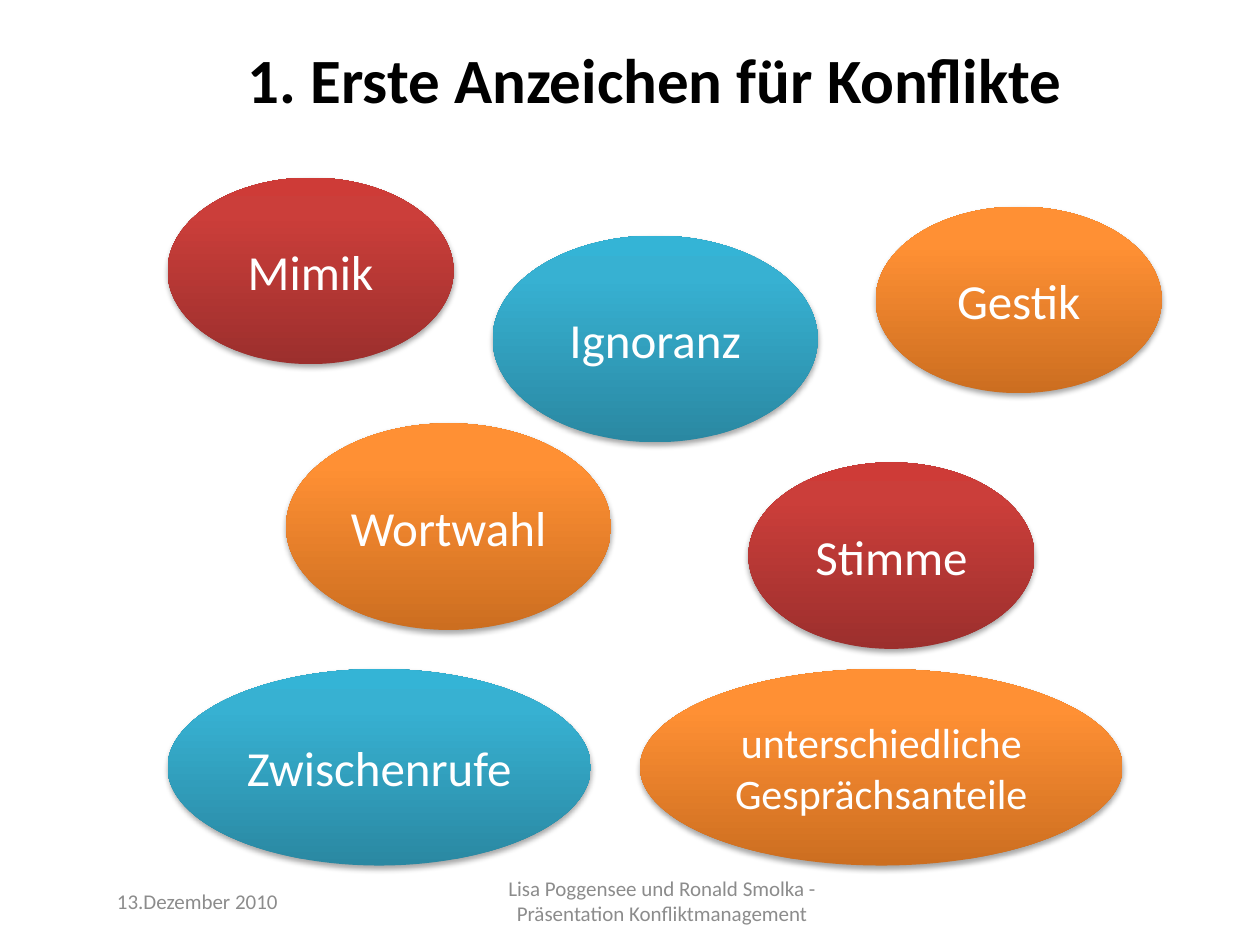
from dataclasses import dataclass

from pptx import Presentation
from pptx.dml.color import RGBColor
from pptx.enum.shapes import MSO_SHAPE as Shape
from pptx.enum.text import MSO_ANCHOR as Anchor, PP_ALIGN as Align
from pptx.oxml import parse_xml
from pptx.oxml.ns import nsdecls
from pptx.util import Inches, Pt


@dataclass(frozen=True)
class Theme:
    font: str = "Calibri"
    black: str = "000000"
    white: str = "FFFFFF"
    grey: str = "8C8C8C"
    # Gradient colours from bottom to top
    red: tuple = ("9C2F2D", "CB3E3A", "CE3B37")
    blue: tuple = ("2A88A2", "37B1D2", "34B4D6")
    orange: tuple = ("CC6E20", "FF9034", "FF9136")
    stops: tuple = (0, 80, 100)
    title_size: int = 36
    bubble_size: int = 28
    small_bubble_size: int = 24
    footer_size: int = 12


THEME = Theme()


def write_text(shape, text, size, color, bold=False, align=Align.CENTER):
    frame = shape.text_frame
    frame.word_wrap = True
    frame.vertical_anchor = Anchor.MIDDLE
    para = frame.paragraphs[0]
    para.alignment = align
    span = para.add_run()
    span.text = text
    span.font.name = THEME.font
    span.font.size = Pt(size)
    span.font.bold = bold
    span.font.color.rgb = RGBColor.from_string(color)


def gradient_xml(colors):
    stops = "".join(
        f'<a:gs pos="{pos * 1000}"><a:srgbClr val="{color}"/></a:gs>'
        for pos, color in zip(THEME.stops, colors)
    )
    return parse_xml(
        f'<a:gradFill {nsdecls("a")} rotWithShape="1"><a:gsLst>{stops}</a:gsLst>'
        '<a:lin ang="16200000" scaled="0"/></a:gradFill>'
    )


def shadow_xml():
    return parse_xml(
        f'<a:effectLst {nsdecls("a")}>'
        '<a:outerShdw blurRad="40000" dist="23000" dir="5400000" rotWithShape="0">'
        '<a:srgbClr val="000000"><a:alpha val="35000"/></a:srgbClr>'
        '</a:outerShdw></a:effectLst>'
    )


class Slide:
    def __init__(self, deck):
        self.page = deck.slides.add_slide(deck.slide_layouts[6])

    def label(self, place, text, size, color, **style):
        box = self.page.shapes.add_textbox(*map(Inches, place))
        write_text(box, text, size, color, **style)

    def bubble(self, place, text, colors, size=THEME.bubble_size):
        oval = self.page.shapes.add_shape(Shape.OVAL, *map(Inches, place))
        properties = oval.element.spPr
        properties.append(gradient_xml(colors))
        oval.line.fill.background()
        properties.append(shadow_xml())
        write_text(oval, text, size, THEME.white)


def main():
    deck = Presentation()
    deck.slide_width, deck.slide_height = Inches(10), Inches(7.5)
    slide = Slide(deck)

    # Bubbles, from back to front
    small, medium = (2.27, 1.48), (2.58, 1.64)
    slide.bubble((1.33, 5.31, 3.36, 1.56), "Zwischenrufe", THEME.blue)
    slide.bubble((3.91, 1.87, *medium), "Ignoranz", THEME.blue)
    slide.bubble((5.08, 5.31, 3.83, 1.56), "unterschiedliche Gesprächsanteile",
                 THEME.orange, size=THEME.small_bubble_size)
    slide.bubble((2.27, 3.36, *medium), "Wortwahl", THEME.orange)
    slide.bubble((5.94, 3.67, *small), "Stimme", THEME.red)
    slide.bubble((6.95, 1.64, *small), "Gestik", THEME.orange)
    slide.bubble((1.33, 1.41, *small), "Mimik", THEME.red)

    # Title
    slide.label((0.78, 0, 8.83, 1.25), "1. Erste Anzeichen für Konflikte",
                THEME.title_size, THEME.black, bold=True)

    # Footer
    slide.label((0.83, 6.95, 2.33, 0.4), "13.Dezember 2010",
                THEME.footer_size, THEME.grey, align=Align.LEFT)
    slide.label((3.67, 6.95, 3.17, 0.4),
                "Lisa Poggensee und Ronald Smolka - Präsentation Konfliktmanagement",
                THEME.footer_size, THEME.grey)

    deck.save("out.pptx")


if __name__ == "__main__":
    main()
